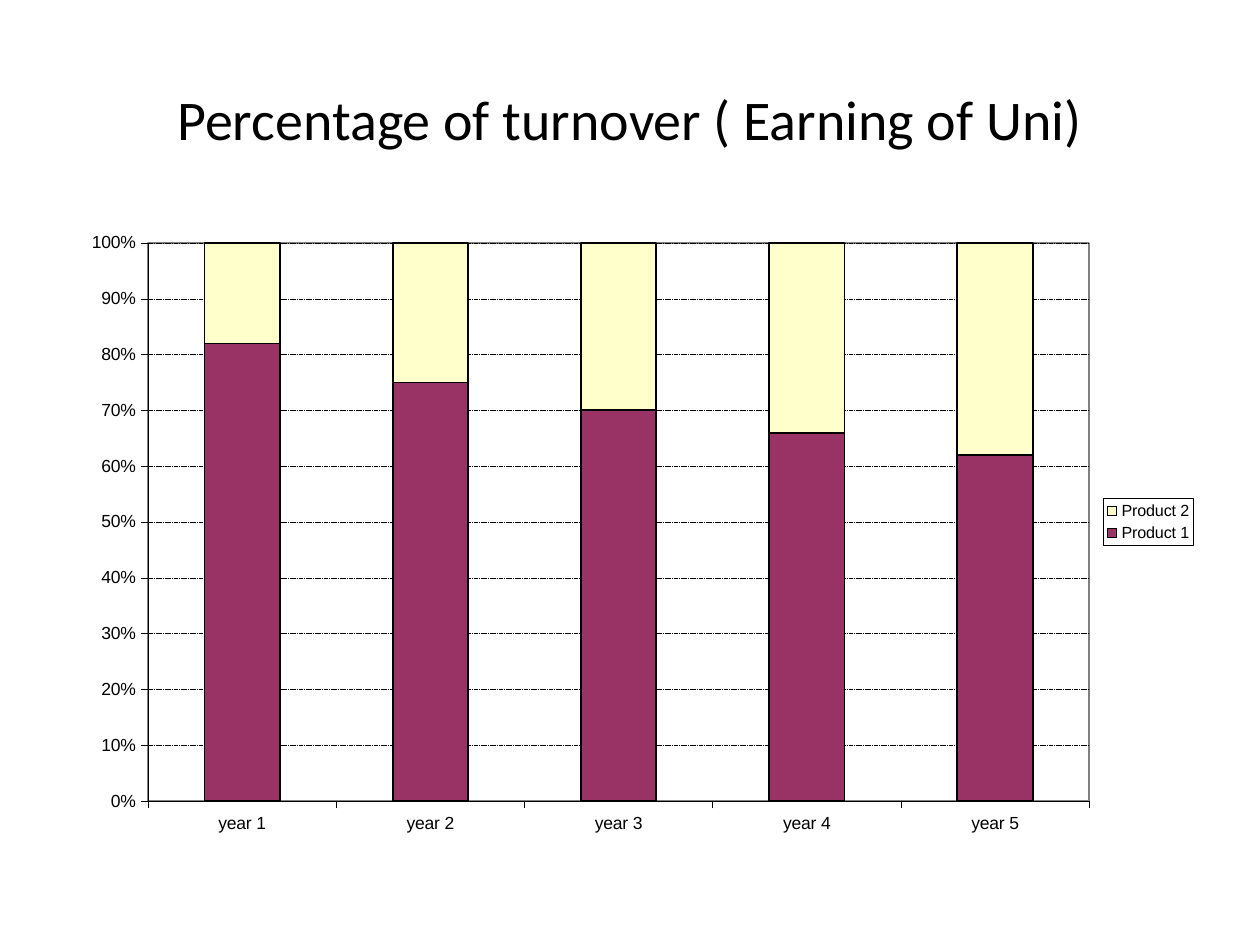
from dataclasses import dataclass

from pptx import Presentation
from pptx.chart.data import CategoryChartData
from pptx.dml.color import RGBColor
from pptx.enum.chart import XL_CHART_TYPE as ChartType, XL_LEGEND_POSITION as LegendPosition
from pptx.enum.chart import XL_TICK_MARK as TickMark
from pptx.enum.dml import MSO_LINE as LineStyle
from pptx.enum.text import MSO_ANCHOR as Anchor, PP_ALIGN as Align
from pptx.oxml import parse_xml
from pptx.oxml.ns import nsdecls, qn
from pptx.util import Inches, Pt


@dataclass(frozen=True)
class Theme:
    title_font: str = "Calibri"
    chart_font: str = "Arial"
    title_size: float = 32
    axis_size: float = 10
    legend_size: float = 9.2
    ink: str = "000000"
    frame: str = "808080"
    series: tuple = ("993366", "FFFFCC")
    hairline: float = 0.25
    outline: float = 1


def style_font(font, name, size, color):
    font.name = name
    font.size = Pt(size)
    font.bold = False
    font.color.rgb = RGBColor.from_string(color)


def style_line(line, color, width, dash=None):
    line.color.rgb = RGBColor.from_string(color)
    line.width = Pt(width)
    if dash:
        line.dash_style = dash


def write_text(frame, text, font, size, color, align=Align.LEFT, anchor=Anchor.TOP):
    frame.word_wrap = True
    frame.vertical_anchor = anchor
    paragraph = frame.paragraphs[0]
    paragraph.alignment = align
    run = paragraph.add_run()
    run.text = text
    style_font(run.font, font, size, color)


def manual_layout(parent, index, shares, inner=False):
    for layout in parent.findall(qn("c:layout")):
        parent.remove(layout)
    target = '<c:layoutTarget val="inner"/>' if inner else ""
    modes = "".join(f'<c:{axis}Mode val="edge"/>' for axis in "xy")
    values = "".join(f'<c:{key} val="{share}"/>' for key, share in zip("xywh", shares))
    parent.insert(index, parse_xml(
        f'<c:layout {nsdecls("c")}><c:manualLayout>{target}{modes}{values}'
        "</c:manualLayout></c:layout>"))


def outline_properties(color, width):
    return parse_xml(
        f'<c:spPr {nsdecls("c", "a")}><a:noFill/><a:ln w="{Pt(width)}"><a:solidFill>'
        f'<a:srgbClr val="{color}"/></a:solidFill></a:ln></c:spPr>')


class SlideBuilder:
    def __init__(self, presentation, theme):
        self.presentation = presentation
        self.theme = theme
        self.slide = presentation.slides.add_slide(presentation.slide_layouts[6])

    def box(self, left, top, width, height):
        across, down = self.presentation.slide_width, self.presentation.slide_height
        return (round(left * across), round(top * down),
                round(width * across), round(height * down))

    def title(self, text, area):
        shape = self.slide.shapes.add_textbox(*self.box(*area))
        write_text(shape.text_frame, text, self.theme.title_font, self.theme.title_size,
                   self.theme.ink, align=Align.CENTER, anchor=Anchor.MIDDLE)

    def stacked_chart(self, categories, series, area, plot_shares, legend_shares):
        data = CategoryChartData()
        data.categories = categories
        for name, values in series.items():
            data.add_series(name, values)
        chart = self.slide.shapes.add_chart(
            ChartType.COLUMN_STACKED_100, *self.box(*area), data).chart
        chart.has_title = False
        theme = self.theme
        style_font(chart.font, theme.chart_font, theme.axis_size, theme.ink)
        self.columns(chart.plots[0])
        self.axes(chart)
        self.legend(chart, legend_shares)
        plot_area = chart.plots[0]._element.getparent()
        manual_layout(plot_area, 0, plot_shares, inner=True)
        plot_area.append(outline_properties(theme.frame, theme.outline))

    def columns(self, plot):
        plot.gap_width = 150
        plot.overlap = 100
        plot.vary_by_categories = False
        for series, color in zip(plot.series, self.theme.series):
            series.format.fill.solid()
            series.format.fill.fore_color.rgb = RGBColor.from_string(color)
            style_line(series.format.line, self.theme.ink, self.theme.outline)

    def axes(self, chart):
        theme = self.theme
        for axis in (chart.category_axis, chart.value_axis):
            axis.major_tick_mark = TickMark.OUTSIDE
            axis.minor_tick_mark = TickMark.NONE
            style_line(axis.format.line, theme.ink, theme.hairline)
            style_font(axis.tick_labels.font, theme.chart_font, theme.axis_size, theme.ink)
        value_axis = chart.value_axis
        value_axis.major_unit = 0.1
        value_axis.tick_labels.number_format = "0%"
        value_axis.tick_labels.number_format_is_linked = False
        value_axis.has_major_gridlines = True
        style_line(value_axis.major_gridlines.format.line, theme.ink, theme.hairline,
                   LineStyle.SQUARE_DOT)

    def legend(self, chart, shares):
        theme = self.theme
        chart.has_legend = True
        legend = chart.legend
        legend.position = LegendPosition.RIGHT
        legend.include_in_layout = False
        style_font(legend.font, theme.chart_font, theme.legend_size, theme.ink)
        element = legend._element
        manual_layout(element, 1, shares)
        element.find(qn("c:overlay")).addnext(outline_properties(theme.ink, theme.hairline))


def main():
    presentation = Presentation()
    presentation.slide_width, presentation.slide_height = Inches(10), Inches(7.5)
    builder = SlideBuilder(presentation, Theme())
    builder.title("Percentage of turnover ( Earning of Uni)", (0.05, 0.04, 0.9, 0.17))
    first_shares = [82, 75, 70, 66, 62]
    builder.stacked_chart(
        [f"year {year}" for year in range(1, 6)],
        {"Product 1": first_shares, "Product 2": [100 - share for share in first_shares]},
        area=(0.05, 0.7 / 3, 0.9, 0.66),
        plot_shares=(0.075, 0.036, 0.83, 0.895),
        legend_shares=(0.917, 0.446, 0.08, 0.075))
    presentation.save("out.pptx")


if __name__ == "__main__":
    main()
